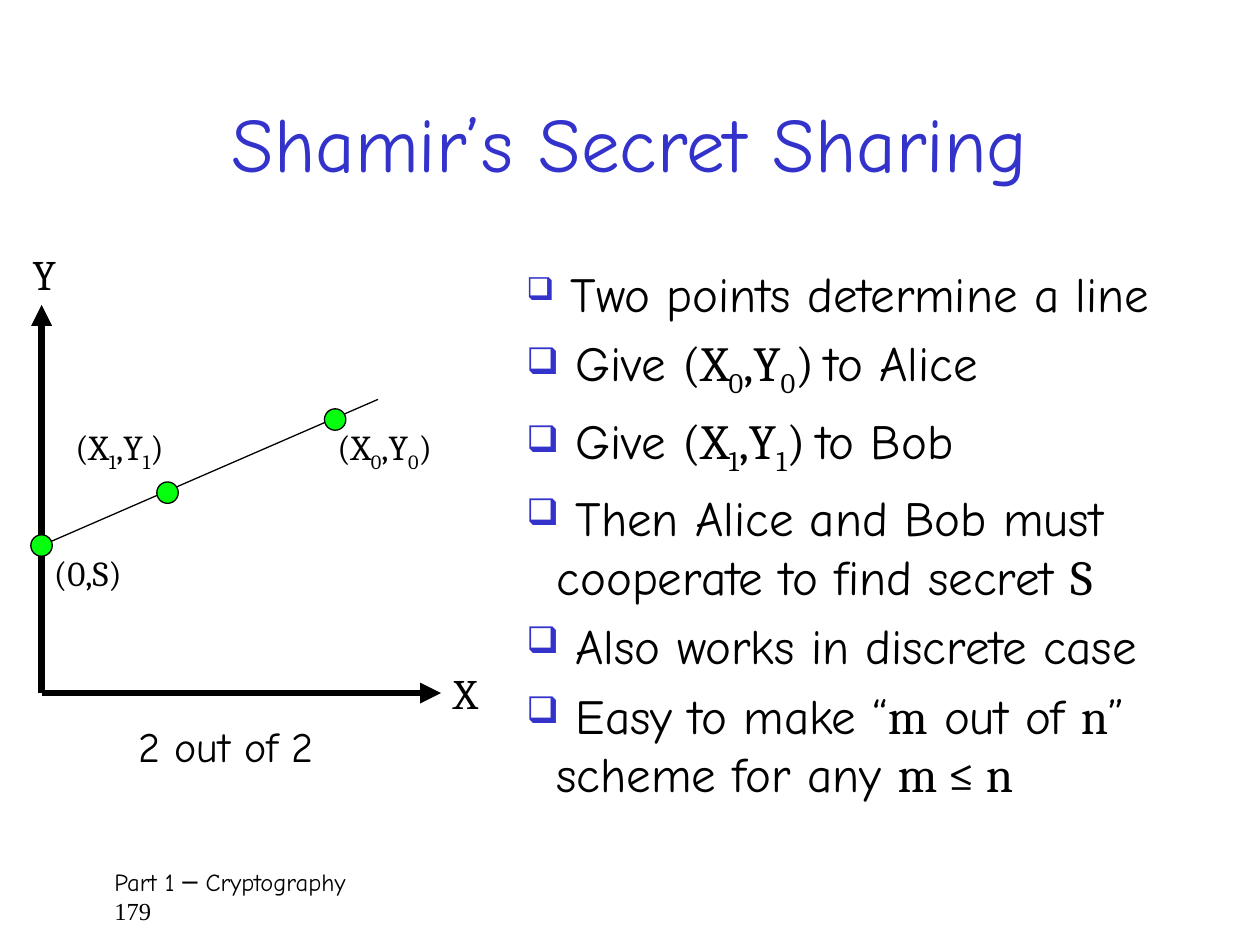
from lxml import etree
from pptx import Presentation
from pptx import util as u
from pptx.dml.color import RGBColor
from pptx.enum import shapes, text
from pptx.oxml.ns import qn

BLACK = RGBColor(0x00, 0x00, 0x00)
BLUE = RGBColor(0x33, 0x33, 0xCC)
GREEN = RGBColor(0x06, 0xFF, 0x0E)
HAND = "Comic Neue"
MATH = "Cambria"
SERIF = "Times New Roman"
SUBSCRIPT = "-25000"


def add_run(paragraph, words, size, font=HAND, color=BLACK, lowered=False):
    run = paragraph.add_run()
    run.text = words
    run.font.size = u.Pt(size)
    run.font.name = font
    run.font.color.rgb = color
    if lowered:
        run.font._element.set("baseline", SUBSCRIPT)


def add_point(paragraph, index, size):
    for words, lowered in (("(X", False), (index, True), (",Y", False),
                           (index, True), (")", False)):
        add_run(paragraph, words, size, MATH, lowered=lowered)


def add_text_box(slide, left, top, width, height, wrap=False):
    box = slide.shapes.add_textbox(*map(u.Inches, (left, top, width, height)))
    box.text_frame.word_wrap = wrap
    return box.text_frame


def add_line(slide, start, end, weight, arrow=False):
    line = slide.shapes.add_connector(
        shapes.MSO_CONNECTOR.STRAIGHT, *map(u.Inches, (*start, *end)))
    line.line.color.rgb = BLACK
    line.line.width = u.Pt(weight)
    if arrow:
        etree.SubElement(line.line._get_or_add_ln(), qn("a:tailEnd"), type="triangle")
    etree.SubElement(line._element.spPr, qn("a:effectLst"))


def add_dot(slide, center_x, center_y, diameter=0.17):
    dot = slide.shapes.add_shape(
        shapes.MSO_SHAPE.OVAL, u.Inches(center_x - diameter / 2),
        u.Inches(center_y - diameter / 2), u.Inches(diameter), u.Inches(diameter))
    dot.shadow.inherit = False
    dot.fill.solid()
    dot.fill.fore_color.rgb = GREEN
    dot.line.color.rgb = BLACK
    dot.line.width = u.Pt(0.75)


def add_bullet(paragraph):
    paragraph.space_after = u.Pt(6)
    props = paragraph._p.get_or_add_pPr()
    props.set("marL", str(u.Inches(0.24)))
    props.set("indent", str(-u.Inches(0.24)))
    color = etree.SubElement(props, qn("a:buClr"))
    etree.SubElement(color, qn("a:srgbClr"), val=str(BLUE))
    etree.SubElement(props, qn("a:buSzPct"), val="75000")
    etree.SubElement(props, qn("a:buChar"), char="❑")


def build_title(slide, left, top, width, height):
    title = slide.shapes.title
    title.left, title.top, title.width, title.height = map(
        u.Inches, (left, top, width, height))
    title.text_frame.vertical_anchor = text.MSO_ANCHOR.MIDDLE
    heading = title.text_frame.paragraphs[0]
    heading.alignment = text.PP_ALIGN.CENTER
    add_run(heading, "Shamir’s Secret Sharing", 44, color=BLUE)


def build_graph(slide, left, top, width, height):
    bottom = top + height
    secret_y = bottom - 1.17
    add_line(slide, (left, bottom), (left + width, bottom), 4, arrow=True)
    add_line(slide, (left, bottom), (left, top), 4, arrow=True)
    add_line(slide, (left, secret_y), (left + 2.67, secret_y - 1.16), 0.75)
    for across, rise in ((2.33, 1), (1, 0.42), (0, 0)):
        add_dot(slide, left + across, secret_y - rise)

    for index, across in (("0", 2.25), ("1", 0.17)):
        point = add_text_box(slide, left + across, top + 0.91, 1.03, 0.43)
        add_point(point.paragraphs[0], index, 20)

    for words, across, down, label_width, label_height, size, font in (
            ("(0,S)", 0, secret_y - top, 0.8, 0.43, 20, MATH),
            ("X", width, height - 0.25, 0.42, 0.5, 24, MATH),
            ("Y", -0.17, -0.5, 0.42, 0.5, 24, MATH),
            ("2 out of 2", 0.67, height + 0.17, 1.76, 0.57, 24, HAND)):
        label = add_text_box(slide, left + across, top + down, label_width, label_height)
        add_run(label.paragraphs[0], words, size, font)


def build_bullets(slide, left, top, width, height):
    frame = add_text_box(slide, left, top, width, height, wrap=True)
    items = iter(range(6))

    def next_item():
        paragraph = frame.add_paragraph() if next(items) else frame.paragraphs[0]
        add_bullet(paragraph)
        return paragraph

    line_fact = next_item()
    add_run(line_fact, " ", 24)
    add_run(line_fact, "Two points determine a line", 28)

    for index, person in (("0", "Alice"), ("1", "Bob")):
        share = next_item()
        add_run(share, " Give ", 28)
        add_point(share, index, 28)
        add_run(share, " ", 28, MATH)
        add_run(share, f"to {person}", 28)

    for runs in (
            ((" Then Alice and Bob must cooperate to find secret ", HAND), ("S", MATH)),
            ((" Also works in discrete case", HAND),),
            ((" Easy to make “", HAND), ("m", MATH), (" out of ", HAND), ("n", MATH),
             ("” scheme for any ", HAND), ("m ≤ n", MATH))):
        item = next_item()
        for words, font in runs:
            add_run(item, words, 28, font)


def build_footer(slide, left, top, width, height):
    frame = add_text_box(slide, left, top, width, height, wrap=True)
    add_run(frame.paragraphs[0], "Part 1 ─ Cryptography", 14)
    add_run(frame.add_paragraph(), "179", 14, SERIF)


def main():
    deck = Presentation()
    deck.slide_width, deck.slide_height = u.Inches(10), u.Inches(7.5)
    slide = deck.slides.add_slide(deck.slide_layouts.get_by_name("Title Only"))
    build_footer(slide, 0.81, 6.83, 8.52, 0.5)
    build_title(slide, 0.75, 0.5, 8.5, 1.25)
    build_graph(slide, 0.33, 2.42, 3.17, 3.08)
    build_bullets(slide, 4.08, 2.04, 5.75, 4.29)
    deck.save("out.pptx")


if __name__ == "__main__":
    main()
